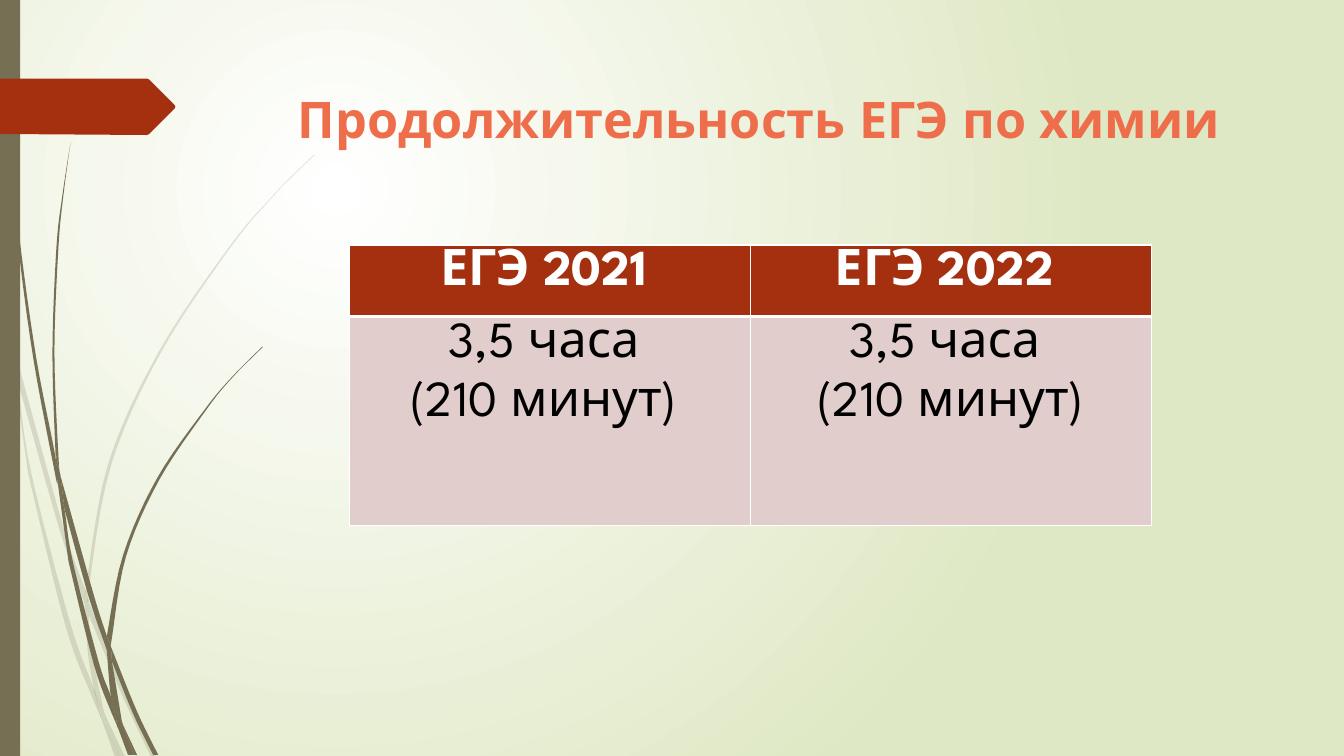
from lxml import etree
from pptx import Presentation
from pptx.dml.color import RGBColor
from pptx.enum.shapes import MSO_SHAPE
from pptx.enum.text import MSO_ANCHOR, PP_ALIGN as Align
from pptx.oxml import parse_xml
from pptx.oxml.ns import nsdecls, qn
from pptx.util import Inches, Pt

FONT = "League Spartan"
OLIVE, RUST, CORAL, ROSE = "766F54", "A53010", "EE6E4B", "E1CDCC"
WHITE, BLACK, PALE_GREEN = "FFFFFF", "000000", "DFE8C4"

# Every blade piece is a pair of edges: one runs along it, the other runs back.
PALE_BLADES = [
    ([(0.11, 3.5), (0.09, 3.22), (0, 2.82)], [(0, 2.99), (0.1, 3.44)]),
    ([(0.14, 3.45), (0.62, 5.2), (0.85, 5.86)],
     [(0.84, 5.99), (0.58, 5.22), (0.17, 3.76)]),
    ([(0.88, 5.96), (0.92, 6.07), (1.27, 6.92), (1.55, 7.51)],
     [(1.5, 7.51), (1.23, 6.94), (0.88, 6.1)]),
    ([(1.19, 7.51), (1.24, 7.51)], [(1.05, 7.11)]),
    ([(0.11, 3.5), (0.17, 3.76), (0.31, 4.69), (0.7, 6.19), (0.93, 6.83), (0.99, 7.07), (1.01, 7.14)],
     [(0.92, 6.93), (0.65, 6.21), (0.28, 4.7)]),
    ([(0.84, 5.99), (0.87, 6.46), (0.93, 6.83), (0.96, 6.92), (1.05, 7.11)],
     [(1.03, 7.06), (0.91, 6.46), (0.88, 6.1), (0.88, 6.08)]),
    ([(0.88, 5.96), (0.88, 5.84), (1.1, 4.62), (1.6, 3.49), (2.29, 2.45), (2.68, 1.98), (2.9, 1.75), (3.12, 1.54)],
     [(3.12, 1.53), (2.89, 1.75), (2.68, 1.97), (2.28, 2.44), (1.58, 3.48), (1.07, 4.61), (0.85, 5.84), (0.85, 5.86)]),
    ([(1.01, 7.14), (1.14, 7.51)], [(1.19, 7.51)]),
    ([(0.88, 6.08), (0.88, 5.96)], [(0.85, 5.86), (0.84, 5.99)]),
    ([(0.93, 6.83), (0.99, 7.07), (1.01, 7.14), (1.19, 7.51)],
     [(1.05, 7.11), (0.96, 6.92)]),
]
DARK_BLADES = [
    ([(0.04, 0), (0.05, 0.48), (0.08, 1.09), (0.19, 2.32), (0.36, 3.55), (0.55, 4.53), (0.57, 4.81)],
     [(0.56, 4.77), (0.33, 3.55), (0.17, 2.33), (0.07, 1.1), (0.04, 0.48), (0.03, 0)]),
    ([(0.6, 4.72), (0.93, 5.9), (1.06, 6.31)],
     [(1.06, 6.45), (0.88, 5.92), (0.64, 5.05)]),
    ([(1.1, 6.41), (1.13, 6.49), (1.36, 7.06), (1.57, 7.49)],
     [(1.52, 7.49), (1.32, 7.08), (1.11, 6.56)]),
    ([(0.57, 4.77), (0.64, 5.05), (0.72, 5.56), (0.98, 6.57), (1.1, 6.91), (1.16, 7.17), (1.17, 7.22)],
     [(1.11, 7.08), (0.93, 6.59), (0.68, 5.57)]),
    ([(0.6, 4.72), (0.58, 4.53), (0.54, 3.49), (0.58, 2.45), (0.63, 1.93), (0.7, 1.41)],
     [(0.7, 1.41), (0.62, 1.93), (0.56, 2.45), (0.52, 3.49), (0.55, 4.49)]),
    ([(1.33, 7.49), (1.36, 7.49)], [(1.22, 7.19)]),
    ([(0.57, 4.77), (0.64, 5.05)], [(0.6, 4.72), (0.55, 4.49)]),
    ([(1.1, 6.41), (1.11, 6.33), (1.25, 5.52), (1.58, 4.76), (2.05, 4.06), (2.31, 3.74), (2.61, 3.44)],
     [(2.6, 3.44), (2.31, 3.73), (2.04, 4.05), (1.56, 4.74), (1.22, 5.51), (1.06, 6.31)]),
    ([(1.17, 7.22), (1.27, 7.49)], [(1.31, 7.49)]),
    ([(1.06, 6.45), (1.1, 6.91), (1.16, 7.06), (1.22, 7.19)],
     [(1.21, 7.16), (1.11, 6.56), (1.09, 6.51)]),
    ([(1.06, 6.45), (1.11, 6.56)], [(1.1, 6.41), (1.06, 6.31)]),
    ([(1.1, 6.91), (1.16, 7.17), (1.17, 7.22), (1.3, 7.49)],
     [(1.33, 7.49), (1.22, 7.19), (1.16, 7.06)]),
]
POINTER = [(0, 0), (1.46, 0), (1.48, 0.01), (1.73, 0.26), (1.74, 0.28),
           (1.73, 0.3), (1.48, 0.55), (1.46, 0.56), (0, 0.55)]


def rgb(color):
    return RGBColor.from_string(color)


def paint(shape, color, opacity=100):
    shape.shadow.inherit = False
    shape.fill.solid()
    shape.fill.fore_color.rgb = rgb(color)
    shape.line.fill.background()
    if opacity < 100:
        color_element = shape._element.spPr.find(qn("a:solidFill"))[0]
        etree.SubElement(color_element, qn("a:alpha"), val=str(opacity * 1000))


def smooth(points, steps=6):
    """Return a Catmull-Rom curve through the points."""
    padded = [points[0], *points, points[-1]]
    curve = [points[0]]
    for a, b, c, d in zip(padded, padded[1:], padded[2:], padded[3:]):
        for step in range(1, steps + 1):
            t = step / steps
            curve.append(tuple(
                0.5 * (2 * q + (r - p) * t + (2 * p - 5 * q + 4 * r - s) * t ** 2
                       + (3 * q - p - 3 * r + s) * t ** 3)
                for p, q, r, s in zip(a, b, c, d)))
    return curve


def add_outline(shapes, left, top, points, color, opacity=100):
    corners = [(Inches(left + x), Inches(top + y)) for x, y in points]
    builder = shapes.build_freeform(*corners[0])
    builder.add_line_segments(corners[1:], close=True)
    paint(builder.convert_to_shape(), color, opacity)


def add_grass(slide, left, top):
    for blades, opacity in ((PALE_BLADES, 20), (DARK_BLADES, 100)):
        group = slide.shapes.add_group_shape()
        for edge, return_edge in blades:
            add_outline(group.shapes, left, top, smooth(edge) + smooth(return_edge), OLIVE, opacity)


def add_background(slide):
    fill = slide.background.fill
    fill.gradient()
    for stop, color in zip(fill.gradient_stops, (WHITE, PALE_GREEN)):
        stop.color.rgb = rgb(color)
    gradient = slide._element.find(".//" + qn("a:gradFill"))
    gradient.replace(gradient.find(qn("a:lin")), parse_xml(
        f'<a:path {nsdecls("a")} path="circle">'
        '<a:fillToRect l="50000" t="50000" r="100000" b="100000"/></a:path>'))


def add_side_bar(slide, left, top, width, height):
    bar = slide.shapes.add_shape(MSO_SHAPE.RECTANGLE, *map(Inches, (left, top, width, height)))
    paint(bar, OLIVE)


def write(text_frame, text, color, bold):
    text_frame.word_wrap = True
    text_frame.text = text
    for paragraph in text_frame.paragraphs:
        paragraph.alignment = Align.CENTER
        font = paragraph.runs[0].font
        font.name, font.size, font.bold = FONT, Pt(36), bold
        font.color.rgb = rgb(color)


def add_title(slide, left, top, width, height):
    box = slide.shapes.add_textbox(*map(Inches, (left, top, width, height)))
    box.text_frame.vertical_anchor = MSO_ANCHOR.TOP
    write(box.text_frame, "Продолжительность ЕГЭ по химии", CORAL, True)


def set_borders(cell, bottom_width):
    properties = cell._tc.get_or_add_tcPr()
    for side, width in (("L", 1), ("R", 1), ("T", 1), ("B", bottom_width)):
        properties.append(parse_xml(
            f'<a:ln{side} {nsdecls("a")} w="{Pt(width)}"><a:solidFill>'
            f'<a:srgbClr val="{WHITE}"/></a:solidFill></a:ln{side}>'))


def add_duration_table(slide, left, top, width, height):
    rows = [["ЕГЭ 2021 ", "ЕГЭ 2022 "],
            ["3,5 часа \n(210 минут) ", "3,5 часа \n(210 минут)"]]
    header_height = 0.71
    table = slide.shapes.add_table(2, 2, *map(Inches, (left, top, width, height))).table
    table.rows[0].height = Inches(header_height)
    table.rows[1].height = Inches(height - header_height)
    for row_index, row in enumerate(rows):
        header = row_index == 0
        for column_index, text in enumerate(row):
            cell = table.cell(row_index, column_index)
            cell.margin_left = cell.margin_right = Inches(0.07)
            cell.margin_top = cell.margin_bottom = Inches(0.03)
            set_borders(cell, 3 if header else 1)
            cell.fill.solid()
            cell.fill.fore_color.rgb = rgb(RUST if header else ROSE)
            write(cell.text_frame, text, WHITE if header else BLACK, header)
            for paragraph in cell.text_frame.paragraphs:
                paragraph.line_spacing = 1.05
                paragraph.space_after = Pt(8)


def main():
    presentation = Presentation()
    presentation.slide_width, presentation.slide_height = Inches(13.33), Inches(7.5)
    slide = presentation.slides.add_slide(presentation.slide_layouts[6])
    add_background(slide)
    add_grass(slide, 0, 0)
    add_side_bar(slide, 0, 0, 0.2, 7.5)
    add_outline(slide.shapes, 0, 0.78, POINTER, RUST)
    add_title(slide, 2.39, 0.82, 10.28, 1.35)
    add_duration_table(slide, 3.47, 2.43, 7.95, 2.78)
    presentation.save("out.pptx")


if __name__ == "__main__":
    main()
